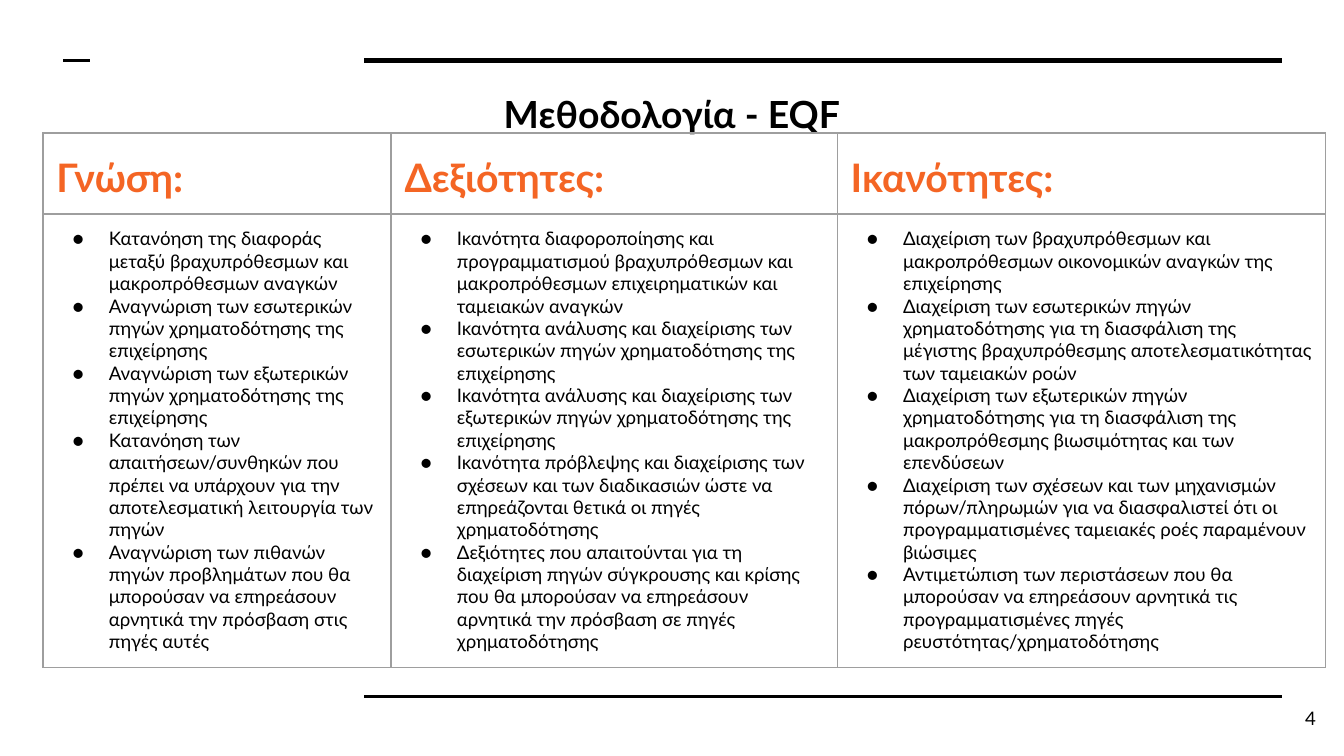
import pptx
import pptx.util
import pptx.dml.color
import pptx.enum.shapes
import pptx.enum.text
import pptx.oxml
import pptx.oxml.ns
from pptx.util import Inches

FONT = "Lato"
BLACK, ORANGE, GREY = "000000", "F46524", "9E9E9E"
TITLE = "Μεθοδολογία - EQF"
PAGE = "4"
COLUMNS = [
    ("Γνώση:", 2.59, [
        "Κατανόηση της διαφοράς μεταξύ βραχυπρόθεσμων και μακροπρόθεσμων αναγκών",
        "Αναγνώριση των εσωτερικών πηγών χρηματοδότησης της επιχείρησης",
        "Αναγνώριση των εξωτερικών πηγών χρηματοδότησης της επιχείρησης",
        "Κατανόηση των απαιτήσεων/συνθηκών που πρέπει να υπάρχουν για την αποτελεσματική λειτουργία των πηγών",
        "Αναγνώριση των πιθανών πηγών προβλημάτων που θα μπορούσαν να επηρεάσουν αρνητικά την πρόσβαση στις πηγές αυτές",
    ]),
    ("Δεξιότητες:", 3.32, [
        "Ικανότητα διαφοροποίησης και προγραμματισμού βραχυπρόθεσμων και μακροπρόθεσμων επιχειρηματικών και ταμειακών αναγκών",
        "Ικανότητα ανάλυσης και διαχείρισης των εσωτερικών πηγών χρηματοδότησης της επιχείρησης",
        "Ικανότητα ανάλυσης και διαχείρισης των εξωτερικών πηγών χρηματοδότησης της επιχείρησης",
        "Ικανότητα πρόβλεψης και διαχείρισης των σχέσεων και των διαδικασιών ώστε να επηρεάζονται θετικά οι πηγές χρηματοδότησης",
        "Δεξιότητες που απαιτούνται για τη διαχείριση πηγών σύγκρουσης και κρίσης που θα μπορούσαν να επηρεάσουν αρνητικά την πρόσβαση σε πηγές χρηματοδότησης",
    ]),
    ("Ικανότητες:", 3.63, [
        "Διαχείριση των βραχυπρόθεσμων και μακροπρόθεσμων οικονομικών αναγκών της επιχείρησης",
        "Διαχείριση των εσωτερικών πηγών χρηματοδότησης για τη διασφάλιση της μέγιστης βραχυπρόθεσμης αποτελεσματικότητας των ταμειακών ροών",
        "Διαχείριση των εξωτερικών πηγών χρηματοδότησης για τη διασφάλιση της μακροπρόθεσμης βιωσιμότητας και των επενδύσεων",
        "Διαχείριση των σχέσεων και των μηχανισμών πόρων/πληρωμών για να διασφαλιστεί ότι οι προγραμματισμένες ταμειακές ροές παραμένουν βιώσιμες",
        "Αντιμετώπιση των περιστάσεων που θα μπορούσαν να επηρεάσουν αρνητικά τις προγραμματισμένες πηγές ρευστότητας/χρηματοδότησης",
    ]),
]
ROW_HEIGHTS = [0.6, 3.37]
RULES = [(2.71, 9.54, 0.45, 3), (2.71, 9.54, 5.18, 1.5), (0.47, 0.67, 0.45, 1.5)]


def rgb(color):
    return pptx.dml.color.RGBColor.from_string(color)


def add_xml(parent, xml):
    parent.append(pptx.oxml.parse_xml(xml.replace(" ", f" {pptx.oxml.ns.nsdecls('a')} ", 1)))


def style(p, size, color=BLACK, bold=False):
    p.font.name = FONT
    p.font.size = pptx.util.Pt(size)
    p.font.bold = bold
    p.font.color.rgb = rgb(color)


def set_margins(box):
    box.margin_left = box.margin_right = box.margin_top = box.margin_bottom = Inches(0.1)


def add_text(s, text, at, size, align, anchor, bold=False):
    tf = s.shapes.add_textbox(*map(Inches, at)).text_frame
    tf.word_wrap = True
    tf.vertical_anchor = anchor
    set_margins(tf)
    p = tf.paragraphs[0]
    p.text = text
    p.alignment = align
    style(p, size, bold=bold)


def add_rule(s, x1, x2, y, width):
    line = s.shapes.add_connector(pptx.enum.shapes.MSO_CONNECTOR.STRAIGHT,
                                  Inches(x1), Inches(y), Inches(x2), Inches(y))
    line.line.color.rgb = rgb(BLACK)
    line.line.width = pptx.util.Pt(width)
    add_xml(line._element.spPr, "<a:effectLst />")


def add_bullet(p):
    pPr = p._p.get_or_add_pPr()
    pPr.set("marL", str(Inches(0.39)))
    pPr.set("indent", str(Inches(-0.27)))
    add_xml(pPr, f'<a:buClr ><a:srgbClr val="{BLACK}"/></a:buClr>')
    add_xml(pPr, f'<a:buFont typeface="{FONT}"/>')
    add_xml(pPr, '<a:buChar char="●"/>')


def format_cell(cell):
    set_margins(cell)
    tcPr = cell._tc.get_or_add_tcPr()
    for side in "LRTB":
        add_xml(tcPr, f'<a:ln{side} w="{pptx.util.Pt(0.75)}"><a:solidFill>'
                      f'<a:srgbClr val="{GREY}"/></a:solidFill></a:ln{side}>')
    cell.fill.background()


def add_columns(s):
    widths = [width for _, width, _ in COLUMNS]
    table = s.shapes.add_table(len(ROW_HEIGHTS), len(COLUMNS), Inches(0.32), Inches(0.99),
                               Inches(sum(widths)), Inches(sum(ROW_HEIGHTS))).table
    for row, height in zip(table.rows, ROW_HEIGHTS):
        row.height = Inches(height)
    for i, (heading, width, items) in enumerate(COLUMNS):
        table.columns[i].width = Inches(width)
        head, body = table.cell(0, i), table.cell(1, i)
        format_cell(head)
        format_cell(body)
        p = head.text_frame.paragraphs[0]
        p.text = heading
        p.line_spacing = 1.15
        style(p, 21, ORANGE, True)
        body.text = "\n".join(items)
        for p in body.text_frame.paragraphs:
            add_bullet(p)
            style(p, 10)


def main():
    prs = pptx.Presentation()
    prs.slide_width = Inches(10)
    prs.slide_height = prs.slide_width * 9 // 16
    s = prs.slides.add_slide(prs.slide_layouts[6])
    align, anchor = pptx.enum.text.PP_ALIGN, pptx.enum.text.MSO_ANCHOR
    for rule in RULES:
        add_rule(s, *rule)
    add_text(s, TITLE, (1.41, 0.58, 7.18, 0.6), 20, align.CENTER, anchor.TOP, True)
    add_columns(s)
    add_text(s, PAGE, (9.29, 5.13, 0.6, 0.43), 10, align.RIGHT, anchor.MIDDLE)
    prs.save("out.pptx")


if __name__ == "__main__":
    main()
